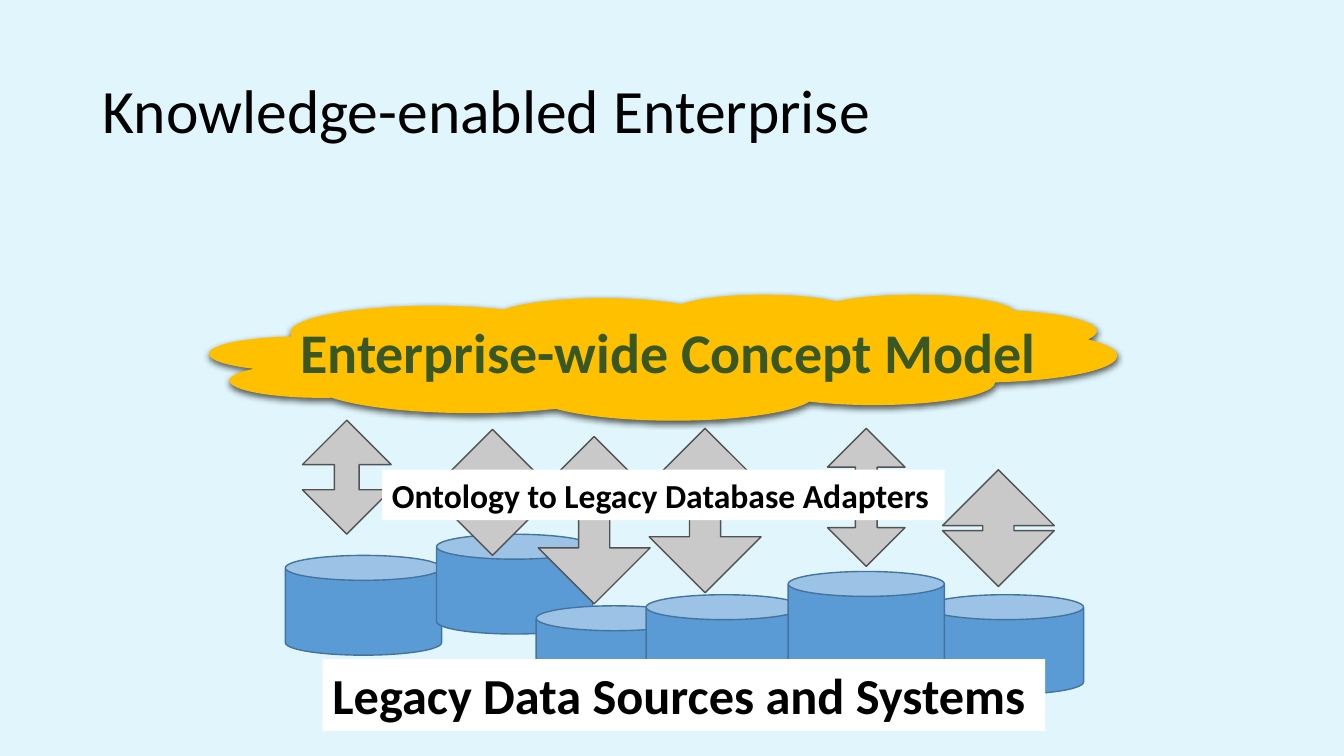
from dataclasses import dataclass

from lxml.etree import SubElement
from pptx import Presentation
from pptx.dml.color import RGBColor
from pptx.enum.shapes import MSO_SHAPE as Shape
from pptx.enum.text import MSO_ANCHOR as Anchor, MSO_AUTO_SIZE as AutoSize, PP_ALIGN as Align
from pptx.oxml.ns import qn
from pptx.util import Pt

COLORS = {
    "background": "E0F6FC",
    "can": "5B9BD5",
    "can_line": "43739E",
    "arrow": "C9C9C9",
    "arrow_line": "525252",
    "cloud": "FFC000",
    "concept": "385723",
    "black": "000000",
    "white": "FFFFFF",
}
FONT = "Calibri"
CAN_SIZE = (111.6, 71.3)
ARROW_ADJUSTMENTS = (0.5, 0.279)


@dataclass
class Box:
    left: float
    top: float
    width: float
    height: float

    def lengths(self) -> tuple:
        return Pt(self.left), Pt(self.top), Pt(self.width), Pt(self.height)


@dataclass
class Label:
    text: str
    box: Box
    size: float
    color: str = "black"
    fill: str = ""


CANS = [Box(left, top, *CAN_SIZE) for left, top in (
    (662.4, 424.8), (203.8, 396.7), (311.8, 381.6),
    (383, 432.7), (461.5, 424.8), (563, 408.2),
)]
ARROWS = [
    Box(311.8, 306.7, 79.9, 90),
    Box(384.5, 311.8, 79.9, 119.5),
    Box(463.7, 306, 79.9, 117.4),
    Box(591.1, 306, 55.4, 98.6),
    Box(673.2, 335.5, 79.9, 83.5),
    Box(216, 300.2, 63.4, 81.4),
]
CLOUD = Box(149.8, 210.2, 648, 90)
TITLE = Label("Knowledge-enabled Enterprise", Box(66.2, 28.8, 828, 104.4), 44)
LABELS = [
    Label("Enterprise-wide Concept Model", Box(207.4, 223.2, 545.8, 55.4), 40, "concept"),
    Label("Legacy Data Sources and Systems", Box(230.4, 470.9, 516.2, 51.1), 36, fill="white"),
    Label("Ontology to Legacy Database Adapters", Box(272.9, 335.5, 401.8, 36), 24, fill="white"),
]


def rgb(name: str) -> RGBColor:
    return RGBColor.from_string(COLORS[name])


def add_shape(slide, kind: Shape, box: Box, fill: str, line: str = ""):
    sp = slide.shapes.add_shape(kind, *box.lengths())
    sp.shadow.inherit = False
    sp.fill.solid()
    sp.fill.fore_color.rgb = rgb(fill)
    if line:
        sp.line.color.rgb = rgb(line)
        sp.line.width = Pt(1)
    else:
        sp.line.fill.background()
    return sp


def add_drop_shadow(sp) -> None:
    """Fill the shape's empty effect list with a soft shadow falling straight down."""
    effects = sp._element.spPr.find(qn("a:effectLst"))
    shadow = SubElement(effects, qn("a:outerShdw"), blurRad=str(Pt(4.5)),
                        dist=str(Pt(1.5)), dir="5400000", algn="ctr", rotWithShape="0")
    color = SubElement(shadow, qn("a:srgbClr"), val=COLORS["black"])
    SubElement(color, qn("a:alpha"), val="63000")


def write_text(sp, label: Label, bold: bool, anchor: Anchor):
    tf = sp.text_frame
    tf.text = label.text
    tf.word_wrap = True
    tf.auto_size = AutoSize.NONE
    tf.vertical_anchor = anchor
    p = tf.paragraphs[0]
    p.alignment = Align.LEFT
    p.font.name = FONT
    p.font.size = Pt(label.size)
    p.font.bold = bold
    p.font.color.rgb = rgb(label.color)
    return p


def add_title(slide, label: Label) -> None:
    title = slide.shapes.title
    title.left, title.top, title.width, title.height = label.box.lengths()
    p = write_text(title, label, False, Anchor.MIDDLE)
    p.line_spacing = 0.9


def add_label(slide, label: Label) -> None:
    if label.fill:
        sp = add_shape(slide, Shape.RECTANGLE, label.box, label.fill)
    else:
        sp = slide.shapes.add_textbox(*label.box.lengths())
    write_text(sp, label, True, Anchor.TOP)


def main() -> None:
    prs = Presentation()
    prs.slide_width, prs.slide_height = Pt(960), Pt(540)
    slide = prs.slides.add_slide(prs.slide_layouts[5])
    slide.background.fill.solid()
    slide.background.fill.fore_color.rgb = rgb("background")

    add_title(slide, TITLE)
    add_drop_shadow(add_shape(slide, Shape.CLOUD, CLOUD, "cloud"))
    for box in CANS:
        add_shape(slide, Shape.CAN, box, "can", "can_line")
    for box in ARROWS:
        arrow = add_shape(slide, Shape.UP_DOWN_ARROW, box, "arrow", "arrow_line")
        for i, value in enumerate(ARROW_ADJUSTMENTS):
            arrow.adjustments[i] = value
    for label in LABELS:
        add_label(slide, label)
    prs.save("out.pptx")


if __name__ == "__main__":
    main()
